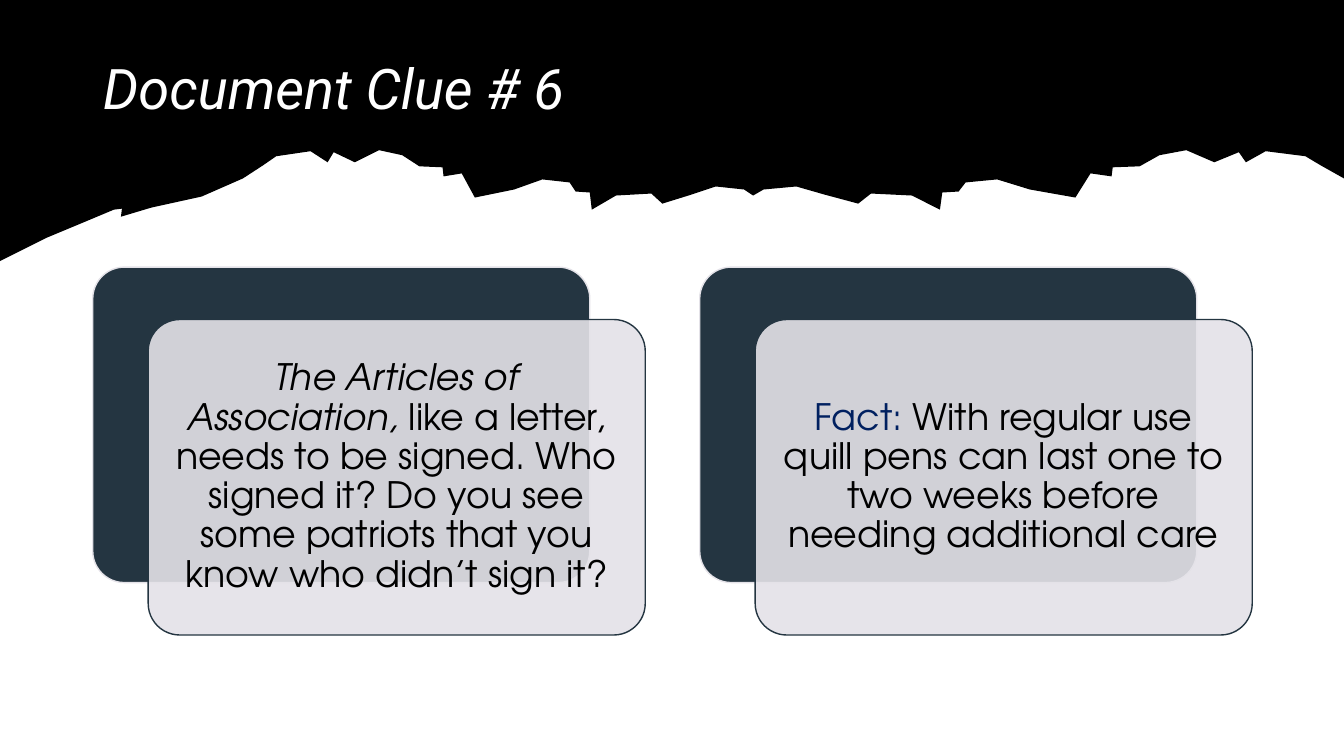
import pptx
import pptx.dml.color
import pptx.enum.shapes
import pptx.enum.text
import pptx.oxml
import pptx.oxml.ns
import pptx.util

Inches = pptx.util.Inches
Pt = pptx.util.Pt

LEFT_SLOPE = [(0, 2.59), (0.46, 2.36), (0.82, 2.21), (1.13, 2.08), (1.21, 2.07),
              (1.2, 2.15), (1.5, 2.06), (2, 1.95)]
RIDGE = [
    (2.41, 1.77), (2.61, 1.64), (2.74, 1.55), (3.08, 1.5), (3.25, 1.61), (3.31, 1.51),
    (3.52, 1.61), (3.76, 1.49), (3.99, 1.54), (4.16, 1.65), (4.39, 1.66), (4.4, 1.75),
    (4.58, 1.72), (4.71, 1.96), (5.1, 1.88), (5.38, 1.78), (5.65, 1.81), (5.71, 1.9),
    (5.85, 1.91), (5.87, 2.08), (6.11, 1.94), (6.46, 1.92), (6.57, 2.02), (6.86, 1.93),
    (7.1, 1.85), (7.38, 1.88),
]
CENTER = (7.47, 1.94)
STRETCH = (13.33 - CENTER[0]) / (CENTER[0] - RIDGE[0][0])

CLUES = [
    [("The Articles of Association, ", {"italic": True}),
     ("like a letter, needs to be signed. Who signed it? Do you see some patriots "
      "that you know who didn’t sign it?", {})],
    [("Fact: ", {"color": "002060"}),
     ("With regular use quill pens can last one to two weeks before needing "
      "additional care", {})],
]


def rgb(value):
    return pptx.dml.color.RGBColor.from_string(value)


def torn_edge():
    mirrored = [(CENTER[0] + STRETCH * (CENTER[0] - x), y) for x, y in reversed(RIDGE)]
    return LEFT_SLOPE + RIDGE + [CENTER] + mirrored


def add_span(para, text, font="TeX Gyre Adventor", size=26, color="000000", italic=False):
    span = para.add_run()
    span.text = text
    span.font.name = font
    span.font.size = Pt(size)
    span.font.italic = italic
    span.font.color.rgb = rgb(color)


class ClueSlide:
    dark = "243541"
    pale = "E4E2E8"
    line_spacing = 0.9

    def __init__(self, deck):
        self.page = deck.slides.add_slide(deck.slide_layouts[5])
        self.page.background.fill.solid()
        self.page.background.fill.fore_color.rgb = rgb("FFFFFF")

    def torn_band(self, edge, color):
        builder = self.page.shapes.build_freeform(
            Inches(edge[0][0]), Inches(edge[0][1]), scale=1.0)
        corners = edge[1:] + [(edge[-1][0], 0), (0, 0)]
        builder.add_line_segments([(Inches(x), Inches(y)) for x, y in corners])
        band = builder.convert_to_shape()
        band.shadow.inherit = False
        band.fill.solid()
        band.fill.fore_color.rgb = rgb(color)
        band.line.fill.background()

    def title(self, text, left, top, width, height):
        box = self.page.shapes.title
        box.left, box.top = Inches(left), Inches(top)
        box.width, box.height = Inches(width), Inches(height)
        frame = box.text_frame
        frame.auto_size = pptx.enum.text.MSO_AUTO_SIZE.NONE
        frame.vertical_anchor = pptx.enum.text.MSO_ANCHOR.MIDDLE
        para = frame.paragraphs[0]
        para.alignment = pptx.enum.text.PP_ALIGN.LEFT
        para.line_spacing = self.line_spacing
        add_span(para, text, font="Roboto", size=40, color="FFFFFF", italic=True)
        self.page.shapes._spTree.append(box._element)

    def panel(self, left, top, fill, line, opacity=100):
        box = self.page.shapes.add_shape(
            pptx.enum.shapes.MSO_SHAPE.ROUNDED_RECTANGLE,
            Inches(left), Inches(top), Inches(4.93), Inches(3.13))
        box.adjustments[0] = 0.1
        box.shadow.inherit = False
        box.fill.solid()
        box.fill.fore_color.rgb = rgb(fill)
        box.line.color.rgb = rgb(line)
        box.line.width = Pt(1)
        if opacity < 100:
            tint = box.fill._xPr.find(".//" + pptx.oxml.ns.qn("a:srgbClr"))
            alpha = pptx.oxml.parse_xml(
                f'<a:alpha {pptx.oxml.ns.nsdecls("a")} val="{opacity * 1000}"/>')
            tint.append(alpha)
        return box

    def card(self, left, top, spans):
        self.panel(left, top, self.dark, self.pale)
        front = self.panel(left + 0.55, top + 0.52, self.pale, self.dark, opacity=90)
        frame = front.text_frame
        frame.word_wrap = True
        frame.vertical_anchor = pptx.enum.text.MSO_ANCHOR.MIDDLE
        frame.margin_left = frame.margin_right = Inches(0.11)
        frame.margin_top = frame.margin_bottom = Inches(0.11)
        para = frame.paragraphs[0]
        para.alignment = pptx.enum.text.PP_ALIGN.CENTER
        para.line_spacing = self.line_spacing
        for text, style in spans:
            add_span(para, text, **style)


def main():
    deck = pptx.Presentation()
    deck.slide_width, deck.slide_height = Inches(13.33), Inches(7.5)
    slide = ClueSlide(deck)
    slide.torn_band(torn_edge(), "000000")
    slide.title("Document Clue # 6", 0.92, 0.4, 11.5, 1.02)
    for column, spans in enumerate(CLUES):
        slide.card(0.92 + column * 6.02, 2.65, spans)
    deck.save("out.pptx")


if __name__ == "__main__":
    main()
